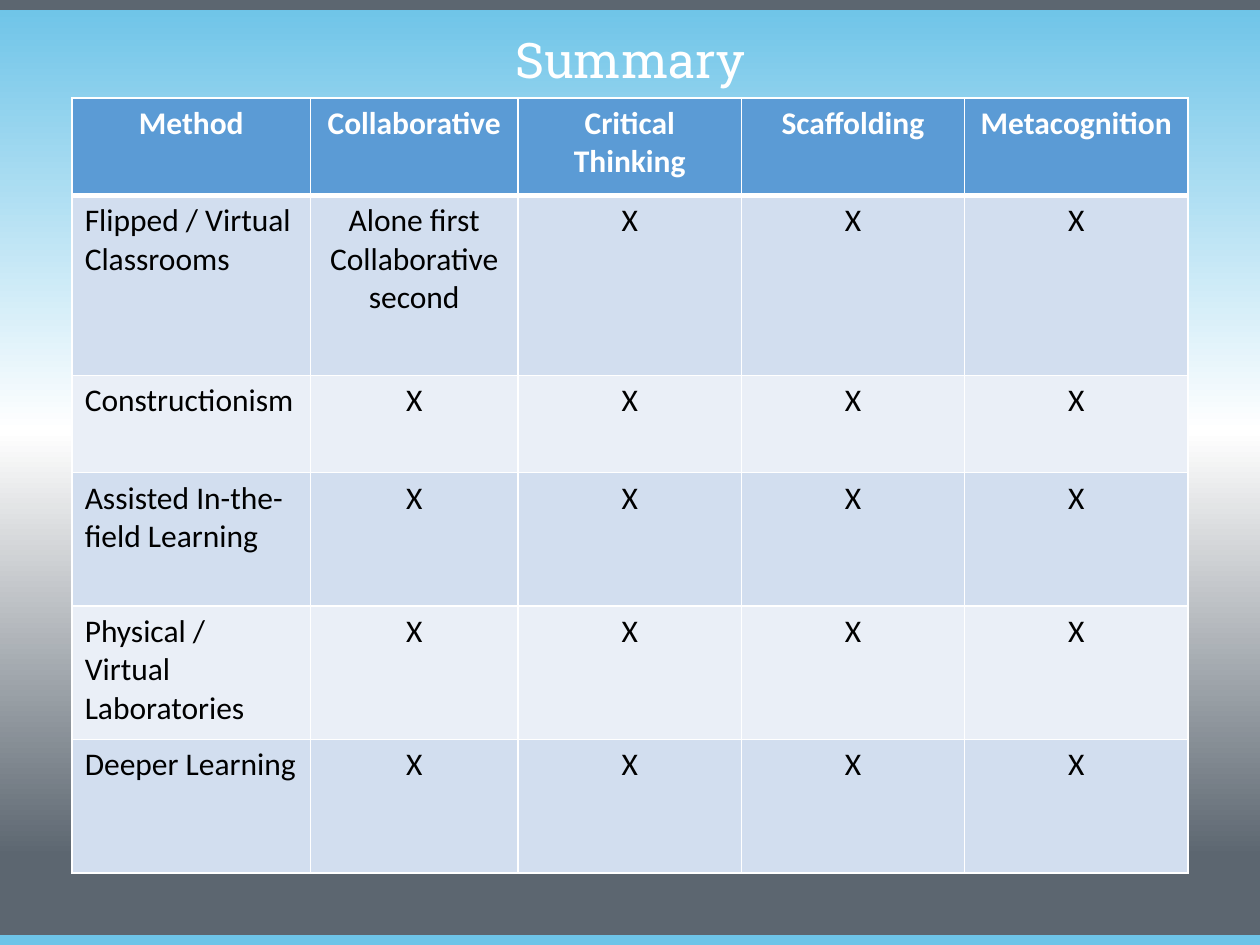
import pptx
import pptx.util
import pptx.dml.color
import pptx.enum.shapes
import pptx.enum.text
import pptx.oxml
import pptx.oxml.ns
from pptx.util import Cm, Pt

SLATE, SKY, WHITE, BLACK = "5C6670", "6EC4E8", "FFFFFF", "000000"
HEADER_FILL = "5B9BD5"
BAND_FILLS = ["D2DEEF", "EAEFF7"]

TITLE = "Summary"
HEADINGS = ["Method", "Collaborative", "Critical Thinking", "Scaffolding", "Metacognition"]
METHODS = [
    ("Flipped / Virtual Classrooms", "Alone first\nCollaborative second"),
    ("Constructionism", "X"),
    ("Assisted In-the-field Learning", "X"),
    ("Physical / Virtual Laboratories", "X"),
    ("Deeper Learning", "X"),
]
ROWS = [HEADINGS] + [[method, collaborative, "X", "X", "X"] for method, collaborative in METHODS]
COLUMN_WIDTHS = [4.8, 4.19, 4.5, 4.5, 4.5]
ROW_HEIGHTS = [1.96, 3.63, 1.96, 2.69, 2.69, 2.69]
TABLE_TOP = 1.98

SLIDE_WIDTH, SLIDE_HEIGHT = 25.4, 19.05
STRIP_HEIGHT = 0.2
BACKDROP_BANDS = [
    (17.02, 2.03, [SLATE]),
    (0.1, 17.17, [SKY, WHITE, SLATE]),
    (0, STRIP_HEIGHT, [SLATE]),
    (SLIDE_HEIGHT - STRIP_HEIGHT, STRIP_HEIGHT, [SKY]),
]


def color(value):
    return pptx.dml.color.RGBColor.from_string(value)


def xml(text):
    return pptx.oxml.parse_xml(text.replace(">", " " + pptx.oxml.ns.nsdecls("a") + ">", 1))


def style(paragraph, font_name, size, font_color, bold, centred):
    paragraph.font.name = font_name
    paragraph.font.size = Pt(size)
    paragraph.font.color.rgb = color(font_color)
    paragraph.font.bold = bold
    align = pptx.enum.text.PP_ALIGN
    paragraph.alignment = align.CENTER if centred else align.LEFT


def fill_gradient(fill, colors):
    fill.gradient()
    fill.gradient_angle = 270
    stops = fill.gradient_stops
    stop_list = stops[0]._gs.getparent()
    for stop in list(stop_list):
        stop_list.remove(stop)
    for index, value in enumerate(colors):
        position = 100000 * index // (len(colors) - 1)
        stop_list.append(xml(f'<a:gs pos="{position}"><a:srgbClr val="{value}"/></a:gs>'))


def add_band(slide, top, height, colors):
    band = slide.shapes.add_shape(
        pptx.enum.shapes.MSO_SHAPE.RECTANGLE, 0, Cm(top), Cm(SLIDE_WIDTH), Cm(height))
    band.shadow.inherit = False
    band.line.fill.background()
    if len(colors) > 1:
        fill_gradient(band.fill, colors)
    else:
        band.fill.solid()
        band.fill.fore_color.rgb = color(colors[0])


def add_title(slide):
    title = slide.shapes.add_textbox(Cm(1.75), Cm(0.53), Cm(21.9), Cm(1.45)).text_frame
    title.word_wrap = True
    title.vertical_anchor = pptx.enum.text.MSO_ANCHOR.MIDDLE
    title.text = TITLE
    title.paragraphs[0].line_spacing = 0.9
    style(title.paragraphs[0], "Roboto Slab", 28, WHITE, False, True)


def add_borders(cell, widths):
    properties = cell._tc.get_or_add_tcPr()
    for side, width in widths.items():
        properties.append(xml(
            f'<a:ln{side} w="{Pt(width)}"><a:solidFill><a:srgbClr val="{WHITE}"/>'
            f'</a:solidFill></a:ln{side}>'))


def add_summary(slide):
    width, height = sum(COLUMN_WIDTHS), sum(ROW_HEIGHTS)
    summary = slide.shapes.add_table(
        len(ROWS), len(HEADINGS), Cm((SLIDE_WIDTH - width) / 2), Cm(TABLE_TOP),
        Cm(width), Cm(height)).table
    for column, column_width in zip(summary.columns, COLUMN_WIDTHS):
        column.width = Cm(column_width)
    for row, row_height in zip(summary.rows, ROW_HEIGHTS):
        row.height = Cm(row_height)
    for r, texts in enumerate(ROWS):
        header = r == 0
        for c, text in enumerate(texts):
            cell = summary.cell(r, c)
            cell.text = text
            add_borders(cell, {"L": 1, "R": 1, "T": 3 if r == 1 else 1, "B": 3 if header else 1})
            cell.fill.solid()
            cell.fill.fore_color.rgb = color(HEADER_FILL if header else BAND_FILLS[(r - 1) % 2])
            for paragraph in cell.text_frame.paragraphs:
                style(paragraph, "Calibri", 18, WHITE if header else BLACK, header, header or c > 0)


def main():
    presentation = pptx.Presentation()
    presentation.slide_width = Cm(SLIDE_WIDTH)
    presentation.slide_height = Cm(SLIDE_HEIGHT)
    slide = presentation.slides.add_slide(presentation.slide_layouts[6])
    for top, height, colors in BACKDROP_BANDS:
        add_band(slide, top, height, colors)
    add_title(slide)
    add_summary(slide)
    presentation.save("out.pptx")


if __name__ == "__main__":
    main()
